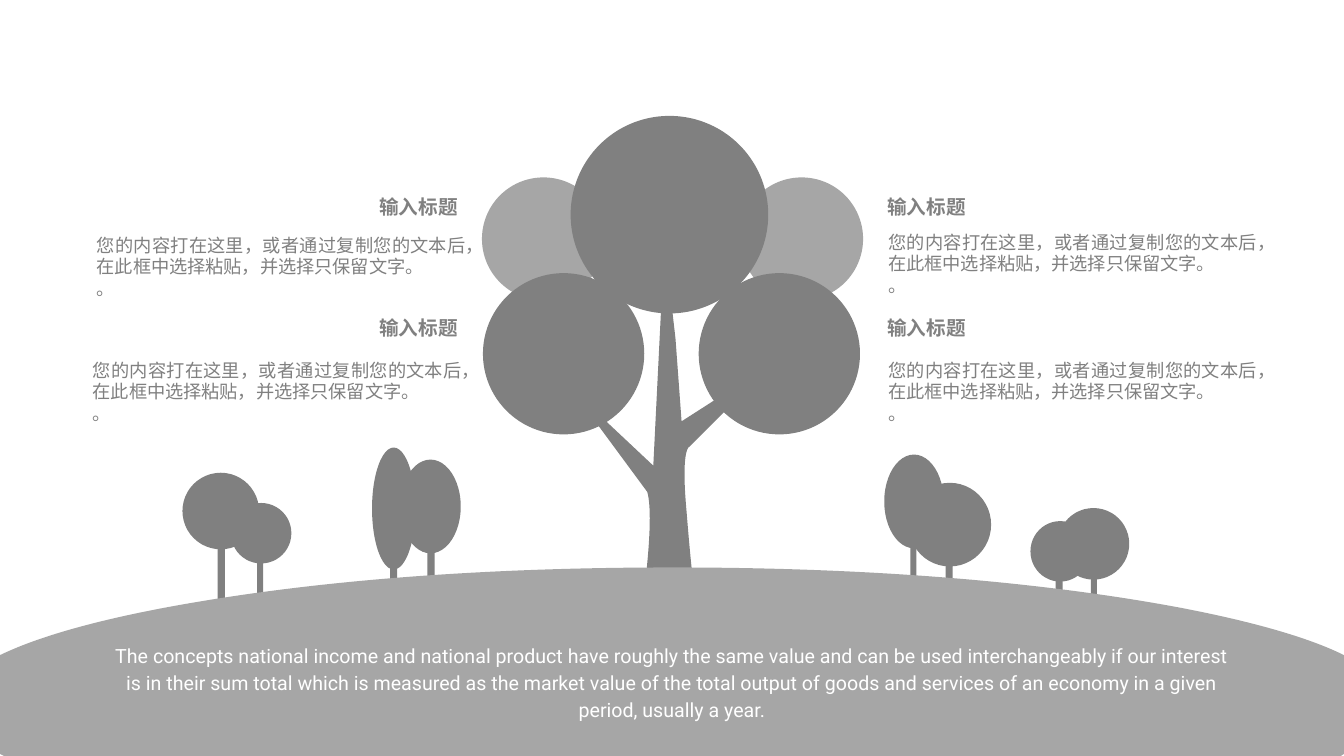
from dataclasses import dataclass

import pptx
import pptx.dml.color
import pptx.enum.shapes
import pptx.enum.text
import pptx.oxml.ns
import pptx.util
from lxml import etree

Inches = pptx.util.Inches
qn = pptx.oxml.ns.qn
SHAPE = pptx.enum.shapes.MSO_SHAPE
ALIGN = pptx.enum.text.PP_ALIGN
ANCHOR = pptx.enum.text.MSO_ANCHOR


@dataclass(frozen=True)
class Theme:
    dark: str = "808080"
    light: str = "A6A6A6"
    white: str = "FFFFFF"
    latin: str = "Roboto"
    cjk: str = "Noto Sans CJK SC"
    heading_size: int = 14
    body_size: int = 13
    caption_size: int = 14


THEME = Theme()
HEADING = "输入标题"
BODY = "您的内容打在这里，或者通过复制您的文本后，在此框中选择粘贴，并选择只保留文字。\n。"
CAPTION = (
    "The concepts national income and national product have roughly the same value "
    "and can be used interchangeably if our interest is in their sum total which is "
    "measured as the market value of the total output of goods and services of an "
    "economy in a given period, usually a year."
)

# Each small grove lists its parts from back to front.
STEM, LEAVES = SHAPE.RECTANGLE, SHAPE.OVAL
GROVES = [
    [(STEM, 9.38, 5, 0.07, 0.75), (LEAVES, 9.01, 4.79, 0.82, 0.83),
     (STEM, 9.03, 5, 0.06, 0.75), (LEAVES, 8.77, 4.51, 0.59, 0.93)],
    [(STEM, 3.87, 5.61, 0.07, 0.22), (STEM, 4.24, 5, 0.07, 0.75),
     (LEAVES, 3.97, 4.56, 0.6, 0.93), (LEAVES, 3.69, 4.44, 0.43, 1.21)],
    [(STEM, 2.16, 5.25, 0.07, 0.75), (STEM, 2.55, 5.44, 0.06, 0.5),
     (LEAVES, 1.81, 4.69, 0.76, 0.76), (LEAVES, 2.29, 4.99, 0.6, 0.6)],
    [(STEM, 10.47, 5.28, 0.07, 0.64), (LEAVES, 10.22, 5.17, 0.59, 0.6),
     (STEM, 10.82, 5.49, 0.06, 0.5), (LEAVES, 10.49, 5.04, 0.71, 0.71)],
]
BACK_CROWNS = [(7.34, 1.76, 1.22), (4.78, 1.76, 1.22)]
FRONT_CROWNS = [(5.66, 1.15, 1.96), (6.93, 2.71, 1.6), (4.79, 2.71, 1.6)]

# An outline step holds one point for a line, three for a Bézier curve.
TRUNK = [
    [(6.36, 6.08)],
    [(6.36, 6.08), (6.5, 5.16), (6.42, 4.88)],
    [(5.66, 3.85)], [(6.48, 4.62)], [(6.59, 2.4)], [(6.7, 3.36)],
    [(6.76, 4.18)], [(7.68, 3.59)], [(6.84, 4.43)],
    [(6.84, 4.43), (6.75, 4.43), (6.81, 5.08)],
    [(6.86, 5.72), (6.91, 6.07), (6.91, 6.07)],
]
HILL = [
    [(0, 7.48)], [(0, 6.5)],
    [(0.35, 6.33), (0.89, 6.17), (1.63, 6.03)],
    [(3.02, 5.77), (4.7, 5.63), (6.67, 5.63)],
    [(8.64, 5.63), (10.32, 5.77), (11.71, 6.03)],
    [(12.44, 6.17), (12.99, 6.33), (13.33, 6.5)],
    [(13.33, 7.48)],
    [(13.32, 7.49), (13.31, 7.49), (13.3, 7.5)],
    [(0.04, 7.5)],
    [(0.03, 7.49), (0.01, 7.49), (0, 7.48)],
]


def paint(sp, color):
    sp.shadow.inherit = False
    sp.fill.solid()
    sp.fill.fore_color.rgb = pptx.dml.color.RGBColor.from_string(color)
    sp.line.fill.background()


def add_preset(shapes, kind, x, y, w, h, color):
    sp = shapes.add_shape(kind, Inches(x), Inches(y), Inches(w), Inches(h))
    paint(sp, color)


def add_crowns(shapes, crowns, color):
    for x, y, size in crowns:
        add_preset(shapes, LEAVES, x, y, size, size, color)


def bend(sp, steps):
    """Merge the line segments of every three-point step into one Bézier curve."""
    lines = iter(list(sp._element.iter(qn("a:lnTo"))))
    for step in steps:
        segments = [next(lines) for _ in step]
        if len(segments) == 3:
            curve = etree.Element(qn("a:cubicBezTo"))
            segments[0].addprevious(curve)
            for segment in segments:
                curve.append(segment[0])
                segment.getparent().remove(segment)


def add_outline(shapes, outline, color):
    points = [(Inches(x), Inches(y)) for step in outline for x, y in step]
    builder = shapes.build_freeform(*points[0])
    builder.add_line_segments(points[1:], close=True)
    sp = builder.convert_to_shape()
    bend(sp, outline[1:])
    paint(sp, color)


def add_text(shapes, text, box, size, color, align, font=THEME.latin,
             bold=False, wrap=True, anchor=ANCHOR.TOP, spacing=None):
    tf = shapes.add_textbox(*map(Inches, box)).text_frame
    tf.margin_left = tf.margin_right = tf.margin_top = tf.margin_bottom = 0
    tf.auto_size = pptx.enum.text.MSO_AUTO_SIZE.SHAPE_TO_FIT_TEXT
    tf.word_wrap = wrap
    tf.vertical_anchor = anchor
    tf.text = text
    for p in tf.paragraphs:
        p.alignment = align
        p.line_spacing = spacing
        for r in p.runs:
            r.font.name = font
            r.font.size = pptx.util.Pt(size)
            r.font.bold = bold
            r.font.color.rgb = pptx.dml.color.RGBColor.from_string(color)
            ea = etree.SubElement(r.font._element, qn("a:ea"))
            ea.set("typeface", THEME.cjk)


def add_heading(shapes, x, y, align):
    add_text(shapes, HEADING, (x, y, 0.79, 0.24), THEME.heading_size, THEME.dark,
             align, bold=True, wrap=False, anchor=ANCHOR.MIDDLE)


def add_body(shapes, x, y):
    add_text(shapes, BODY, (x, y, 3.84, 0.66), THEME.body_size, THEME.dark,
             ALIGN.JUSTIFY, font=THEME.cjk)


def main():
    prs = pptx.Presentation()
    prs.slide_width, prs.slide_height = Inches(13.33), Inches(7.5)
    shapes = prs.slides.add_slide(prs.slide_layouts[6]).shapes

    for grove in GROVES:
        group = shapes.add_group_shape()
        for part in grove:
            add_preset(group.shapes, *part, THEME.dark)

    add_crowns(shapes, BACK_CROWNS, THEME.light)
    add_outline(shapes, TRUNK, THEME.dark)
    add_outline(shapes, HILL, THEME.light)
    add_text(shapes, CAPTION, (1.13, 6.36, 11.07, 0.86), THEME.caption_size,
             THEME.white, ALIGN.CENTER, spacing=1.14)
    add_crowns(shapes, FRONT_CROWNS, THEME.dark)

    for x, align in ((8.8, ALIGN.LEFT), (3.75, ALIGN.RIGHT)):
        for y in (1.93, 3.13):
            add_heading(shapes, x, y, align)
    for x, y in ((0.96, 2.32), (0.92, 3.56), (8.81, 2.29), (8.81, 3.56)):
        add_body(shapes, x, y)

    prs.save("out.pptx")


if __name__ == "__main__":
    main()
